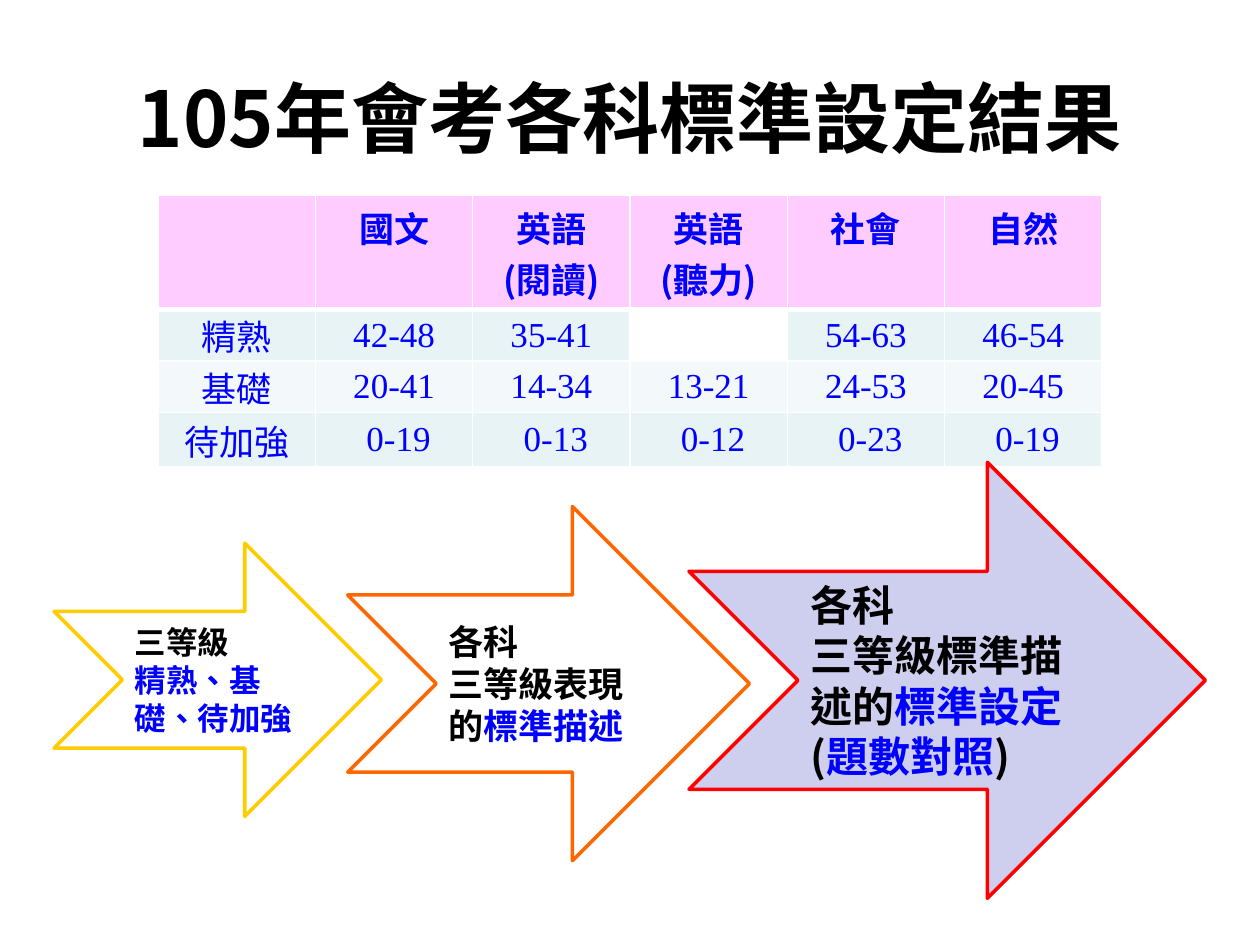
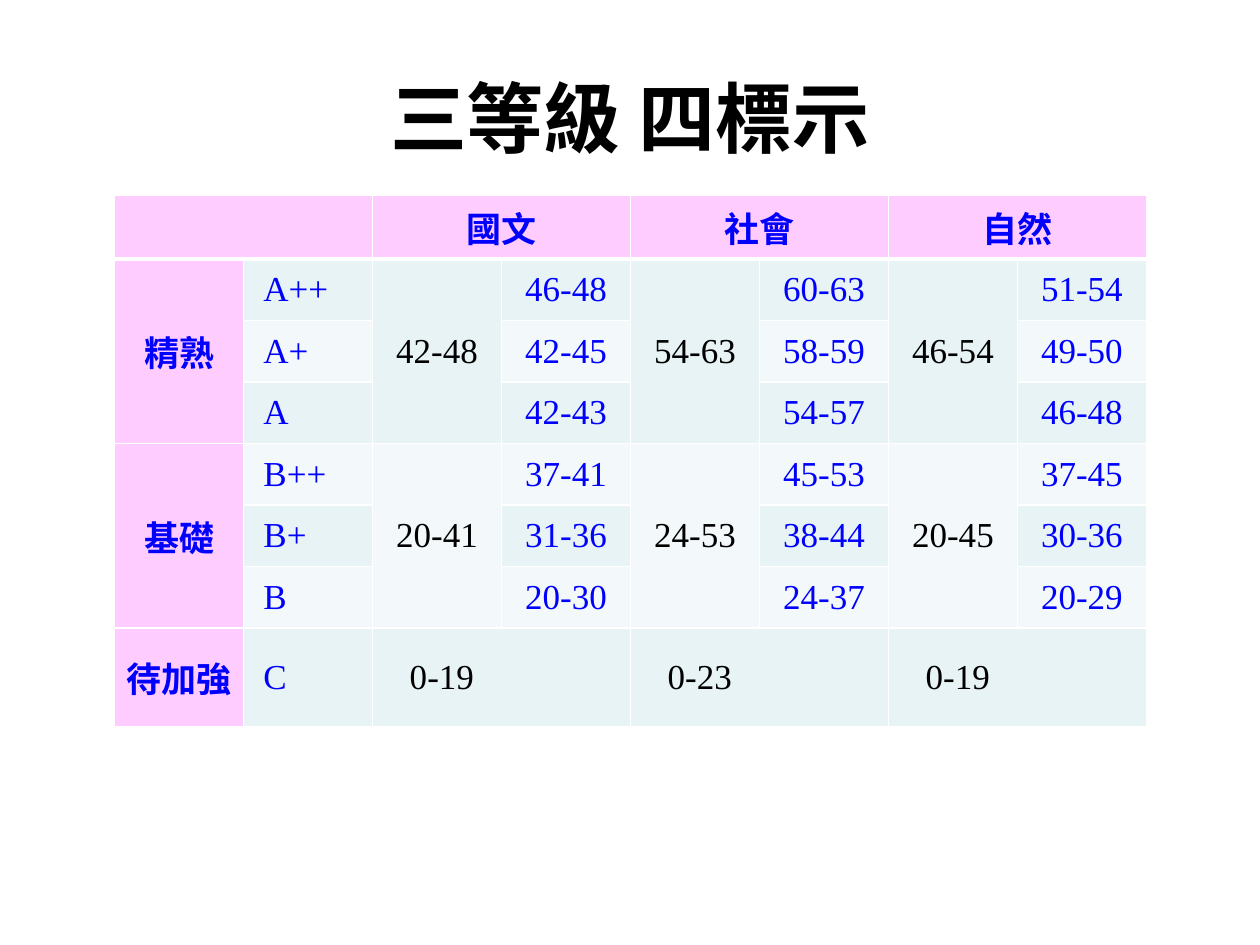
import pptx
import pptx.dml.color
import pptx.enum.shapes
import pptx.enum.text
import pptx.oxml.ns
import pptx.util
from lxml import etree

Cm = pptx.util.Cm
Pt = pptx.util.Pt
ALIGN = pptx.enum.text.PP_ALIGN
MIDDLE = pptx.enum.text.MSO_ANCHOR.MIDDLE
TOP = pptx.enum.text.MSO_ANCHOR.TOP

# Shared style
CJK_FONT, NUMBER_FONT = "Noto Sans CJK SC", "Times New Roman"
BLACK, BLUE, WHITE = "000000", "0000FF", "FFFFFF"
PINK = "FFCCFF"
BANDS = ("E7F3F4", "F3F9FA")
TITLE_BOX = (1.27, 0.76, 22.86, 3.18)
TABLE_TOP = 3.94
TIGHT = (0.05, 0, 0.05, 0)  # cell margins: left, top, right, bottom
ROOMY = (0.25, 0.13, 0.25, 0.13)


def rgb(value):
    return pptx.dml.color.RGBColor.from_string(value)


def format_run(run, size, color, bold=False, font=CJK_FONT):
    run.font.size = Pt(size)
    run.font.bold = bold
    run.font.color.rgb = rgb(color)
    run.font.name = font
    properties = run.font._element
    properties.set("lang", "zh-TW")
    east_asian = etree.SubElement(properties, pptx.oxml.ns.qn("a:ea"))
    east_asian.set("typeface", font)


def add_title(slide, text, box=TITLE_BOX):
    shape = slide.shapes.add_textbox(*map(Cm, box))
    text_frame = shape.text_frame
    text_frame.word_wrap = True
    text_frame.vertical_anchor = MIDDLE
    text_frame.text = text
    paragraph = text_frame.paragraphs[0]
    paragraph.alignment = ALIGN.CENTER
    format_run(paragraph.runs[0], 44, BLACK, bold=True)


# Tables
def add_grid(slide, left, top, column_widths, row_heights):
    table = slide.shapes.add_table(
        len(row_heights), len(column_widths), Cm(left), Cm(top),
        Cm(sum(column_widths)), Cm(sum(row_heights))).table
    table.horz_banding = False
    for column, width in zip(table.columns, column_widths):
        column.width = Cm(width)
    for row, height in zip(table.rows, row_heights):
        row.height = Cm(height)
    return table


def style_cell(cell, fill, bottom_width=1, top_width=1):
    """White borders on all sides, then the fill (None leaves it open)."""
    properties = cell._tc.get_or_add_tcPr()
    widths = {"L": 1, "R": 1, "T": top_width, "B": bottom_width}
    for side, width in widths.items():
        line = etree.SubElement(properties, pptx.oxml.ns.qn("a:ln" + side))
        line.set("w", str(Pt(width)))
        solid = etree.SubElement(line, pptx.oxml.ns.qn("a:solidFill"))
        etree.SubElement(solid, pptx.oxml.ns.qn("a:srgbClr")).set("val", WHITE)
    if fill:
        cell.fill.solid()
        cell.fill.fore_color.rgb = rgb(fill)
    else:
        cell.fill.background()


def style_grid(table, fill_of):
    for row in range(len(table.rows)):
        for column in range(len(table.columns)):
            style_cell(table.cell(row, column), fill_of(row, column),
                       bottom_width=3 if row == 0 else 1,
                       top_width=3 if row == 1 else 1)


def write_cell(cell, text, color=BLUE, bold=False, font=CJK_FONT, margins=TIGHT,
               indent=0, align=ALIGN.CENTER, anchor=MIDDLE):
    left, top, right, bottom = margins
    cell.margin_left, cell.margin_top = Cm(left + indent), Cm(top)
    cell.margin_right, cell.margin_bottom = Cm(right), Cm(bottom)
    cell.vertical_anchor = anchor
    cell.text_frame.text = text
    paragraph = cell.text_frame.paragraphs[0]
    paragraph.alignment = align
    for run in paragraph.runs:
        format_run(run, 20, color, bold, font)


def add_subject_table(slide, left, top):
    headers = ["", "國文", "英語\v(閱讀)", "英語\v(聽力)", "社會", "自然"]
    levels = [
        ["精熟", "42-48", "35-41", "", "54-63", "46-54"],
        ["基礎", "20-41", "14-34", "13-21", "24-53", "20-45"],
        ["待加強", "0-19", "0-13", "0-12", "0-23", "0-19"],
    ]
    table = add_grid(slide, left, top, [3.17] * 6, [2.3, 1.04, 1.04, 1.09])

    def fill_of(row, column):
        if row == 0:
            return PINK
        return BANDS[(row - 1) % 2] if column == 0 or levels[row - 1][column] else None

    style_grid(table, fill_of)
    for column, text in enumerate(headers):
        if text:
            write_cell(table.cell(0, column), text, bold=True, margins=ROOMY, anchor=TOP)
    for row, values in enumerate(levels, start=1):
        for column, text in enumerate(values):
            if text:
                indent = 0.18 if row == 3 and column else 0
                write_cell(table.cell(row, column), text, indent=indent,
                           font=NUMBER_FONT if column else CJK_FONT)


def add_grade_table(slide, left, top):
    subjects = ["國文", "社會", "自然"]
    # level, range per subject, then each grade with its range per subject
    levels = [
        ("精熟", ["42-48", "54-63", "46-54"], [
            ("A++", ["46-48", "60-63", "51-54"]),
            ("A+", ["42-45", "58-59", "49-50"]),
            ("A", ["42-43", "54-57", "46-48"])]),
        ("基礎", ["20-41", "24-53", "20-45"], [
            ("B++", ["37-41", "45-53", "37-45"]),
            ("B+", ["31-36", "38-44", "30-36"]),
            ("B", ["20-30", "24-37", "20-29"])]),
        ("待加強", ["0-19", "0-23", "0-19"], [("C", [])]),
    ]
    table = add_grid(slide, left, top, [2.6] * 8, [1.28] + [1.24] * 6 + [2.0])
    level_rows = {1: 1, 2: 1, 3: 1, 4: 4, 5: 4, 6: 4, 7: 7}

    def fill_of(row, column):
        if row == 0 or column == 0:
            return PINK
        is_level_range = column % 2 == 0
        return BANDS[((level_rows[row] if is_level_range else row) - 1) % 2]

    style_grid(table, fill_of)

    # Subject headings, each over two columns
    for column, subject in zip(range(0, 8, 2), [""] + subjects):
        table.cell(0, column).merge(table.cell(0, column + 1))
        if subject:
            write_cell(table.cell(0, column), subject, bold=True)

    first = 1
    for level, level_ranges, grades in levels:
        last = first + len(grades) - 1
        single = first == last
        if not single:
            table.cell(first, 0).merge(table.cell(last, 0))
        write_cell(table.cell(first, 0), level, bold=True)
        for column, text in zip(range(2, 8, 2), level_ranges):
            cell = table.cell(first, column)
            cell.merge(table.cell(last, column + 1 if single else column))
            write_cell(cell, text, BLACK, font=NUMBER_FONT,
                       indent=0.7 if single else 0,
                       align=ALIGN.LEFT if single else ALIGN.CENTER)
        for row, (grade, grade_ranges) in enumerate(grades, start=first):
            write_cell(table.cell(row, 1), grade, font=NUMBER_FONT,
                       indent=0.35, align=ALIGN.LEFT)
            for column, text in zip(range(3, 8, 2), grade_ranges):
                write_cell(table.cell(row, column), text, font=NUMBER_FONT)
        first = last + 1


# Arrows
def add_step_arrow(slide, box, fill, line, size, paragraphs):
    shape = slide.shapes.add_shape(
        pptx.enum.shapes.MSO_SHAPE.NOTCHED_RIGHT_ARROW, *map(Cm, box))
    shape.shadow.inherit = False
    shape.fill.solid()
    shape.fill.fore_color.rgb = rgb(fill)
    shape.line.color.rgb = rgb(line)
    shape.line.width = Pt(2)
    text_frame = shape.text_frame
    text_frame.word_wrap = True
    text_frame.vertical_anchor = MIDDLE
    for index, runs in enumerate(paragraphs):
        paragraph = text_frame.add_paragraph() if index else text_frame.paragraphs[0]
        paragraph.alignment = ALIGN.LEFT
        # Keep punctuation inside the text area
        paragraph._p.get_or_add_pPr().set("hangingPunct", "0")
        for text, color in runs:
            run = paragraph.add_run()
            run.text = text
            format_run(run, size, color, bold=True)


def build_results_slide(slide):
    add_title(slide, "105年會考各科標準設定結果")
    add_step_arrow(slide, (1.09, 10.95, 6.6, 5.51), WHITE, "FFCC00", 18, [
        [("三等級", BLACK)],
        [("精熟、基礎、待加強", BLUE)]])
    add_step_arrow(slide, (7.01, 10.21, 8.1, 7.14), WHITE, "FF6600", 20, [
        [("各科", BLACK)],
        [("三等級表現的", BLACK), ("標準描述", BLUE)]])
    add_subject_table(slide, 3.19, TABLE_TOP)
    add_step_arrow(slide, (13.89, 9.32, 10.41, 8.79), "CECEEF", "FF0000", 24, [
        [("各科", BLACK)],
        [("三等級標準描述的", BLACK), ("標準設定", BLUE),
         ("(", BLACK), ("題數對照", BLUE), (")", BLACK)]])


def build_grades_slide(slide):
    add_title(slide, "三等級 四標示")
    add_grade_table(slide, 2.31, TABLE_TOP)


def main():
    presentation = pptx.Presentation()
    presentation.slide_width = Cm(25.4)
    presentation.slide_height = Cm(19.05)
    for build in (build_results_slide, build_grades_slide):
        build(presentation.slides.add_slide(presentation.slide_layouts[6]))
    presentation.save("out.pptx")


if __name__ == "__main__":
    main()
